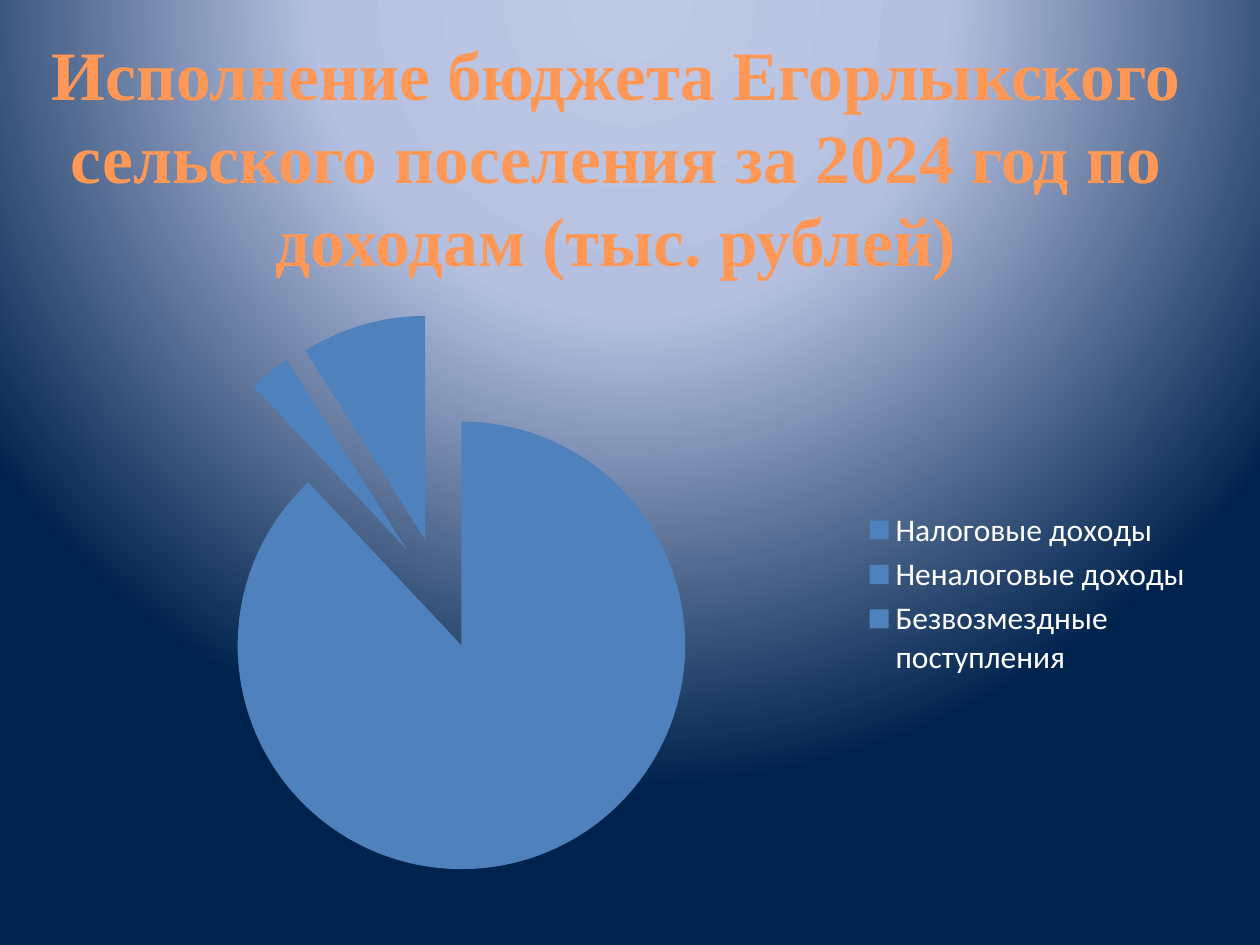
import pptx
import pptx.chart.data
import pptx.dml.color
import pptx.enum.chart
import pptx.enum.text
import pptx.oxml
import pptx.oxml.ns
import pptx.util
from pptx.util import Inches

TITLE = "Исполнение бюджета Егорлыкского сельского поселения за 2024 год по доходам (тыс. рублей)"
INCOME = [
    ("Налоговые доходы", 88),
    ("Неналоговые доходы", 3),
    ("Безвозмездные поступления", 9),
]
COLORS = {"title": "FF9856", "slice": "4F81BD", "legend": "FFFFFF"}
BACKGROUND_STOPS = [(0, "BFC9E5"), (40, "B5C0E0"), (100, "00234D")]
GLOW_CENTER = {"l": 50, "t": -80, "r": 50, "b": 180}
PLOT_AREA = {"x": 0.08, "y": 0, "w": 0.5, "h": 1}
EXPLOSION = 25


def rgb(name):
    return pptx.dml.color.RGBColor.from_string(COLORS[name])


def paint_background(slide):
    """Fill the slide with a radial glow centred above its top edge."""
    fill = slide.background.fill
    fill.solid()
    stops = "".join(
        f'<a:gs pos="{pos * 1000}"><a:srgbClr val="{color}"/></a:gs>'
        for pos, color in BACKGROUND_STOPS
    )
    center = " ".join(f'{side}="{share * 1000}"' for side, share in GLOW_CENTER.items())
    gradient = pptx.oxml.parse_xml(
        f'<a:gradFill {pptx.oxml.ns.nsdecls("a")} rotWithShape="1"><a:gsLst>{stops}</a:gsLst>'
        f'<a:path path="circle"><a:fillToRect {center}/></a:path></a:gradFill>'
    )
    solid = slide.element.find(".//" + pptx.oxml.ns.qn("a:solidFill"))
    solid.getparent().replace(solid, gradient)


def add_title(slide):
    title = slide.shapes.add_textbox(Inches(0.28), Inches(0.3), Inches(9.22), Inches(1.87))
    frame = title.text_frame
    frame.word_wrap = True
    frame.vertical_anchor = pptx.enum.text.MSO_ANCHOR.MIDDLE
    paragraph = frame.paragraphs[0]
    paragraph.alignment = pptx.enum.text.PP_ALIGN.CENTER
    run = paragraph.add_run()
    run.text = TITLE
    run.font.size = pptx.util.Pt(39.6)
    run.font.name = "Times New Roman"
    run.font.bold = True
    run.font.color.rgb = rgb("title")


def place_plot(chart):
    """Fix the inner plot area as shares of the chart frame."""
    plot_area = chart.element.find(".//" + pptx.oxml.ns.qn("c:plotArea"))
    for old_layout in plot_area.findall(pptx.oxml.ns.qn("c:layout")):
        plot_area.remove(old_layout)
    shares = "".join(f'<c:{key} val="{share}"/>' for key, share in PLOT_AREA.items())
    plot_area.insert(0, pptx.oxml.parse_xml(
        f'<c:layout {pptx.oxml.ns.nsdecls("c")}><c:manualLayout><c:layoutTarget val="inner"/>'
        f'<c:xMode val="edge"/><c:yMode val="edge"/>{shares}</c:manualLayout></c:layout>'
    ))


def add_income_pie(slide):
    data = pptx.chart.data.CategoryChartData()
    data.categories = [name for name, _ in INCOME]
    data.add_series("Series 1", [share for _, share in INCOME])
    chart = slide.shapes.add_chart(
        pptx.enum.chart.XL_CHART_TYPE.PIE_EXPLODED,
        Inches(0.51), Inches(2.49), Inches(9.06), Inches(4.44), data,
    ).chart
    chart.has_title = False
    chart.font.size = pptx.util.Pt(18)
    chart.font.name = "Calibri"
    chart.font.color.rgb = rgb("legend")
    chart.has_legend = True
    chart.legend.position = pptx.enum.chart.XL_LEGEND_POSITION.RIGHT
    chart.legend.include_in_layout = False

    plot = chart.plots[0]
    plot.vary_by_categories = True
    series = plot.series[0]
    for index in range(len(INCOME)):
        slice_fill = series.points[index].format.fill
        slice_fill.solid()
        slice_fill.fore_color.rgb = rgb("slice")
    explosion = series._element.find(pptx.oxml.ns.qn("c:explosion"))
    explosion.set("val", str(EXPLOSION))
    for point in series._element.findall(pptx.oxml.ns.qn("c:dPt")):
        point.find(pptx.oxml.ns.qn("c:spPr")).addprevious(pptx.oxml.parse_xml(
            f'<c:explosion {pptx.oxml.ns.nsdecls("c")} val="{EXPLOSION}"/>'
        ))
    place_plot(chart)


def main():
    deck = pptx.Presentation()
    deck.slide_width, deck.slide_height = Inches(10), Inches(7.5)
    slide = deck.slides.add_slide(deck.slide_layouts[6])
    paint_background(slide)
    add_title(slide)
    add_income_pie(slide)
    deck.save("out.pptx")


if __name__ == "__main__":
    main()
